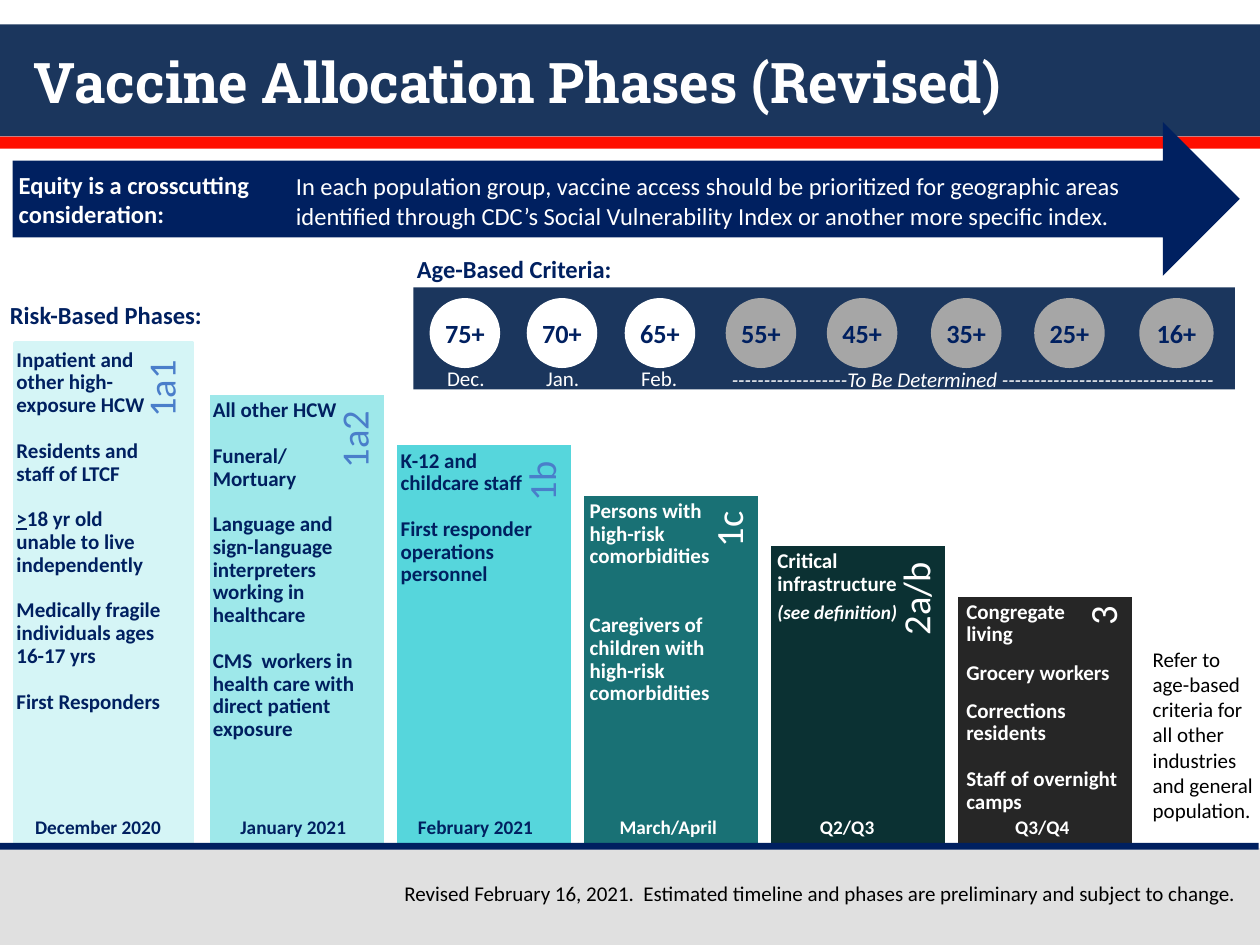
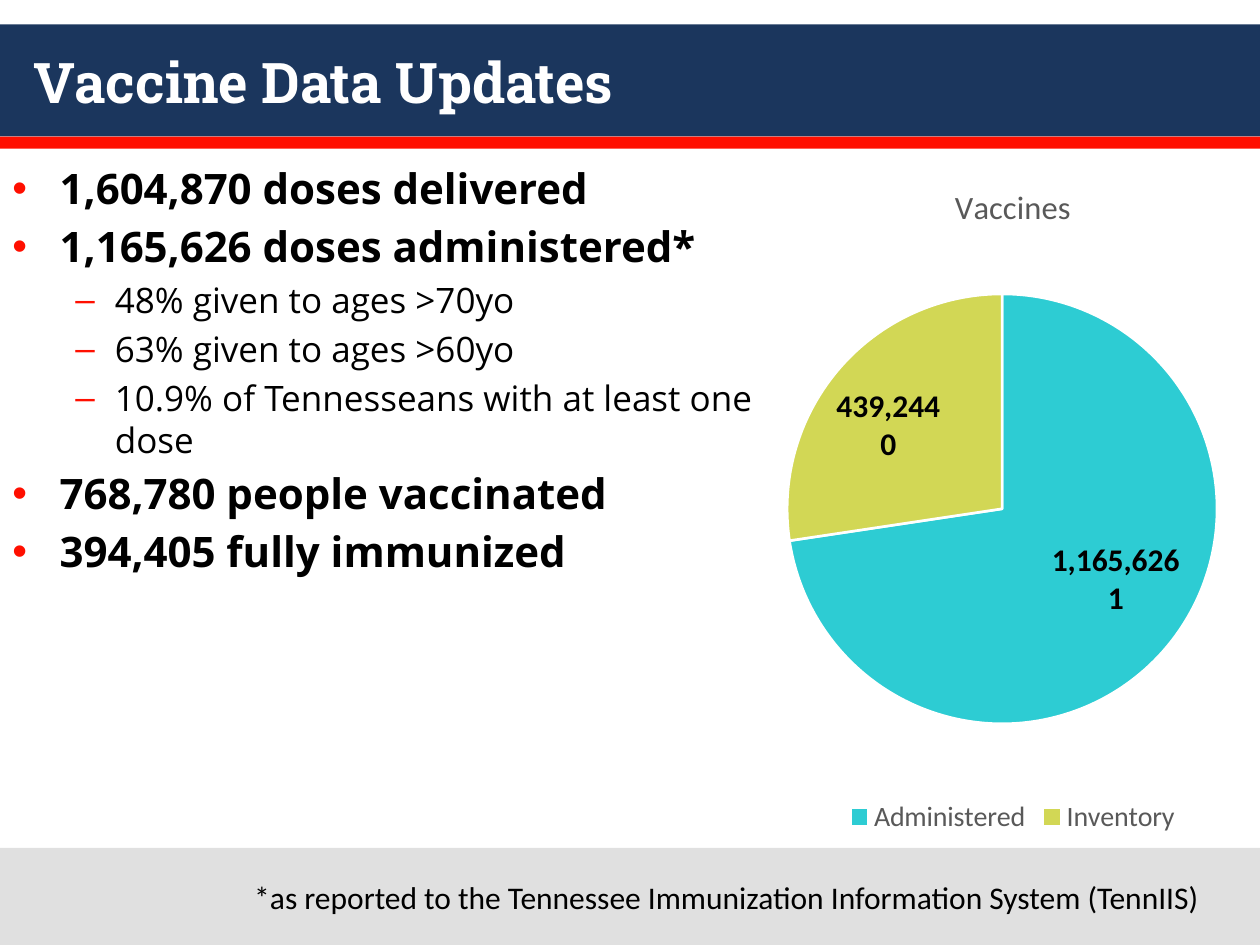
from lxml import etree
from pptx import Presentation
from pptx.chart.data import CategoryChartData as ChartData
from pptx.dml.color import RGBColor as RGB
from pptx.enum.chart import XL_CHART_TYPE as Chart, XL_LABEL_POSITION as Spot
from pptx.enum.chart import XL_LEGEND_POSITION as Legend
from pptx.enum.shapes import MSO_SHAPE as Shape
from pptx.enum.text import MSO_ANCHOR as Anchor, PP_ALIGN as Align
from pptx.oxml import parse_xml
from pptx.oxml.ns import nsdecls, qn
from pptx.util import Pt

HUES = {
    "white": "FFFFFF", "black": "000000", "navy": "1B365D", "ink": "002060",
    "red": "FF0F00", "mist": "E0E0E0", "gray": "A6A6A6", "slate": "595959",
    "blue": "4A7ECA", "ice": "D5F5F6", "pale": "9EE8EA", "aqua": "56D6DC",
    "teal": "197175", "deep": "0B3133", "coal": "262626",
    "cyan": "2DCCD3", "lime": "D2D755",
}
FONT = "Calibri"
BASE = 484  # foot of the phase columns
GAP = 13.2  # one line of 12 point text


def hue(name):
    return RGB.from_string(HUES[name])


def style(font, size, color, bold=False, italic=False, face=FONT):
    font.name, font.size = face, Pt(size)
    font.bold, font.italic = bold, italic
    font.color.rgb = hue(color)


def place(kind, x, y, w, h):
    """Manual chart layout, in fractions of the chart; w and h may be None."""
    tags = [("xMode", "edge"), ("yMode", "edge")] if w else []
    tags = ([("layoutTarget", kind)] if kind else []) + tags
    tags += [(k, v) for k, v in zip("xywh", (x, y, w, h)) if v is not None]
    body = "".join(f'<c:{k} val="{v}"/>' for k, v in tags)
    return parse_xml(f'<c:layout {nsdecls("c")}><c:manualLayout>{body}'
                     '</c:manualLayout></c:layout>')


class Deck:
    def __init__(self):
        self.prs = Presentation()
        self.prs.slide_width, self.prs.slide_height = Pt(720), Pt(540)
        self.slide = None

    def page(self, title):
        self.slide = self.prs.slides.add_slide(self.prs.slide_layouts[6])
        self.shape(0, 14, 720, 64, "navy")
        self.shape(0, 78, 720, 7, "red")
        self.shape(0, 484.5, 720, 55.5, "mist")
        self.text(12.2, 13.7, 696, 65, [title], 32, "white", bold=True,
                  face="Roboto Slab", anchor=Anchor.MIDDLE)

    def shape(self, x, y, w, h, fill, kind=Shape.RECTANGLE, line=None):
        box = self.slide.shapes.add_shape(kind, Pt(x), Pt(y), Pt(w), Pt(h))
        box.shadow.inherit = False
        box.fill.solid()
        box.fill.fore_color.rgb = hue(fill)
        if line:
            box.line.color.rgb = hue(line)
            box.line.width = Pt(2)
        else:
            box.line.fill.background()
        return box

    def text(self, x, y, w, h, lines, size, color, bold=False, italic=False,
             face=FONT, align=Align.LEFT, anchor=Anchor.TOP,
             pad=(7.2, 3.6, 7.2, 3.6), lead=None):
        """Each line is a string, or a pair of string and space before."""
        box = self.slide.shapes.add_textbox(Pt(x), Pt(y), Pt(w), Pt(h))
        frame = box.text_frame
        frame.word_wrap, frame.vertical_anchor = True, anchor
        (frame.margin_left, frame.margin_top,
         frame.margin_right, frame.margin_bottom) = map(Pt, pad)
        pairs = [(ln, 0) if isinstance(ln, str) else ln for ln in lines]
        frame.text = "\n".join(words for words, _ in pairs)
        for par, (_, gap) in zip(frame.paragraphs, pairs):
            par.alignment = align
            if gap:
                par.space_before = Pt(gap)
            if lead:
                par.line_spacing = lead
            for run in par.runs:
                style(run.font, size, color, bold, italic, face)
        return box

    def disc(self, x, y, size, label, fill):
        box = self.shape(x, y, size, 40, fill, Shape.FLOWCHART_CONNECTOR)
        frame = box.text_frame
        frame.word_wrap = False
        frame.margin_left = frame.margin_right = 0
        frame.text = label
        frame.paragraphs[0].alignment = Align.CENTER
        style(frame.paragraphs[0].runs[0].font, 15, "ink", True)

    def phase(self, rank, x, fill, line, tag, hint, color, left, wide, items,
              date, start):
        """Column of the staircase; each is 28.8 points lower than the last."""
        tall = 288 - 28.8 * rank
        top = BASE - tall
        self.shape(x, top, 101.5, tall, fill, line=line)
        size = 0.9 * tall
        mid = x + 85.8
        label = self.text(mid - size / 2, top + size / 2 - 13.3, size, 26.6,
                          [tag], 22, hint, align=Align.RIGHT, lead=0.9,
                          anchor=Anchor.MIDDLE,
                          pad=(6.5, 0, 6.5 if tag == "3" else 10, 2.2))
        label.rotation = 270
        body = self.text(left, top, wide, tall, items, 12, color, bold=True,
                         lead=0.9, pad=(3.6,) * 4)
        self.text(start, 462.4, 100, 21, [date], 11, color, bold=True)
        return body.text_frame.paragraphs

    def bullets(self, x, y, w, h, items):
        """Items are pairs of level and words."""
        box = self.text(x, y, w, h, [words for _, words in items], 24,
                        "black", face="Open Sans")
        forms = [("•", 27, -27, 24, 28.3), ("–", 58.5, -22.5, 20, 24)]
        for n, (level, _) in enumerate(items):
            mark, left, hang, size, lead = forms[level]
            par = box.text_frame.paragraphs[n]
            par.level = level
            props = par._p.get_or_add_pPr()
            props.set("marL", str(Pt(left)))
            props.set("indent", str(Pt(hang)))
            ink = etree.SubElement(props, qn("a:buClr"))
            etree.SubElement(ink, qn("a:srgbClr"), val=HUES["red"])
            etree.SubElement(props, qn("a:buFont"), typeface="Arial")
            etree.SubElement(props, qn("a:buChar"), char=mark)
            par.line_spacing = Pt(lead)
            if n:
                par.space_before = Pt(size * 0.2)
            style(par.runs[0].font, size, "black", level == 0,
                  face="Open Sans")

    def pie(self, x, y, w, h, name, slices):
        """Slices are (name, value, fill, label shift across, down)."""
        data = ChartData(number_format="#,##0")
        data.categories = [part[0] for part in slices]
        data.add_series(name, [part[1] for part in slices])
        chart = self.slide.shapes.add_chart(
            Chart.PIE, Pt(x), Pt(y), Pt(w), Pt(h), data).chart
        style(chart.font, 10, "black")
        chart.has_title = True
        chart.chart_title.text_frame.text = name
        head = chart.chart_title.text_frame.paragraphs[0].runs[0]
        style(head.font, 18.6, "slate")
        chart.has_legend = True
        chart.legend.position = Legend.BOTTOM
        chart.legend.include_in_layout = False
        style(chart.legend.font, 16, "slate")
        plot = chart.plots[0]
        plot.vary_by_categories = True
        for n, (_, _, fill, across, down) in enumerate(slices):
            point = plot.series[0].points[n]
            point.format.fill.solid()
            point.format.fill.fore_color.rgb = hue(fill)
            point.format.line.color.rgb = hue("white")
            point.format.line.width = Pt(1.5)
            point.data_label.position = Spot.CENTER
            style(point.data_label.font, 18, "black", True)
            label = chart._chartSpace.xpath(".//c:dLbl")[n]
            label.find(qn("c:showPercent")).set("val", "1")
            label.insert(1, place(None, across, down, None, None))
            form = etree.Element(qn("c:numFmt"), formatCode="#,##0",
                                 sourceLinked="0")
            label.insert(2, form)
            etree.SubElement(label, qn("c:separator")).text = "\n"
        area = chart._chartSpace.chart.plotArea
        for old in area.findall(qn("c:layout")):
            area.remove(old)
        area.insert(0, place("inner", 0.29, 0.2, 0.4, 0.63))


PHASES = [
    (8.6, "ice", "ice", "1a1", "blue", "ink", 5.8, 90,
     ["Inpatient and other high-exposure HCW",
      ("Residents and staff of LTCF", GAP),
      (">18 yr old unable to live independently", GAP),
      ("Medically fragile individuals ages 16-17 yrs", GAP),
      ("First Responders", GAP)], "December 2020", 13),
    (118.8, "pale", "white", "1a2", "blue", "ink", 118, 95,
     ["All other HCW", ("Funeral/", GAP), "Mortuary",
      ("Language and sign-language interpreters working in healthcare", GAP),
      ("CMS  workers in health care with direct patient exposure", GAP)],
     "January 2021", 130.3),
    (226, "aqua", "white", "1b", "blue", "ink", 225.4, 90.7,
     ["K-12 and childcare staff",
      ("First responder operations personnel", GAP)], "February 2021", 231.8),
    (332.8, "teal", "white", "1c", "white", "white", 333.4, 77,
     ["Persons with high-risk comorbidities",
      ("Caregivers of children with high-risk comorbidities", 2 * GAP)],
     "March/April", 347),
    (439.8, "deep", "white", "2a/b", "white", "white", 440.6, 90,
     ["Critical infrastructure", ("(see definition)", 4)], "Q2/Q3", 461.5),
    (546.6, "coal", "white", "3", "white", "white", 548.6, 100,
     ["Congregate", "living", ("Grocery workers", 8.8),
      ("Corrections residents", 8.8), ("Staff of overnight camps", GAP)],
     "Q3/Q4", 573),
]
AGES = [(245.5, "75+"), (301, "70+"), (357, "65+"), (414.7, "55+"),
        (472.5, "45+"), (532, "35+"), (591, "25+"), (651, "16+")]
TIMES = [(248.4, "Dec."), (305, "Jan."), (359.3, "Feb.")]


def phases(deck):
    deck.page("Vaccine Allocation Phases (Revised)")
    deck.shape(236.2, 164.2, 469.4, 58.3, "navy")
    for n, (x, label) in enumerate(AGES):
        deck.disc(x, 170.3, 42.5 if label == "16+" else 40.3, label,
                  "white" if n < len(TIMES) else "gray")
    for x, month in TIMES:
        deck.text(x, 205.2, 48, 21.6, [month], 12, "white")
    deck.text(411.1, 205.9, 301, 21.6,
              ["------------------To Be Determined "
               "---------------------------------"], 12, "white", italic=True)

    bodies = [deck.phase(n, *row) for n, row in enumerate(PHASES)]
    limit = bodies[0][2]
    first = limit.runs[0]
    rest = limit.add_run()
    first.text, rest.text = first.text[0], first.text[1:]
    style(rest.font, 12, "ink", True)
    first.font.underline = True
    style(bodies[4][1].runs[0].font, 11, "white", True, True)

    deck.shape(7.2, 69.8, 701.3, 87.8, "ink", Shape.RIGHT_ARROW)
    deck.text(3.6, 93.6, 159, 41, ["Equity is a crosscutting consideration:"],
              14, "white", bold=True)
    deck.text(162, 94.3, 508.3, 41,
              ["In each population group, vaccine access should be "
               "prioritized for geographic areas",
               "identified through CDC’s Social Vulnerability Index or "
               "another more specific index."], 14, "white")
    for x, y, words in [(231.1, 141.8, "Age-Based Criteria:"),
                        (-1.4, 167.8, "Risk-Based Phases:")]:
        deck.text(x, y, 241, 24.5, [words], 14, "ink", bold=True)
    deck.text(651.6, 365.8, 73.4, 108.7,
              ["Refer to age-based criteria for all other industries and "
               "general population."], 12, "black")
    deck.shape(0, 481.7, 719.3, 3.8, "ink")
    deck.text(162, 499.7, 551.5, 21.6,
              ["Revised February 16, 2021.  Estimated timeline and phases "
               "are preliminary and subject to change."], 12, "black",
              align=Align.RIGHT)


def updates(deck):
    deck.page("Vaccine Data Updates")
    deck.bullets(0, 90, 440.6, 390, [
        (0, "1,604,870 doses delivered"),
        (0, "1,165,626 doses administered*"),
        (1, "48% given to ages >70yo"),
        (1, "63% given to ages >60yo"),
        (1, "10.9% of Tennesseans with at least one dose"),
        (0, "768,780 people vaccinated"),
        (0, "394,405 fully immunized")])
    deck.pie(271.4, 90, 614.9, 390, "Vaccines", [
        ("Administered", 1165626, "cyan", 0.03, 0),
        ("Inventory", 439244, "lime", -0.03, -0.02)])
    deck.text(138.2, 498.2, 569.5, 29,
              ["*as reported to the Tennessee Immunization Information "
               "System (TennIIS)"], 18, "black")


def main():
    deck = Deck()
    phases(deck)
    updates(deck)
    deck.prs.save("out.pptx")


if __name__ == "__main__":
    main()
